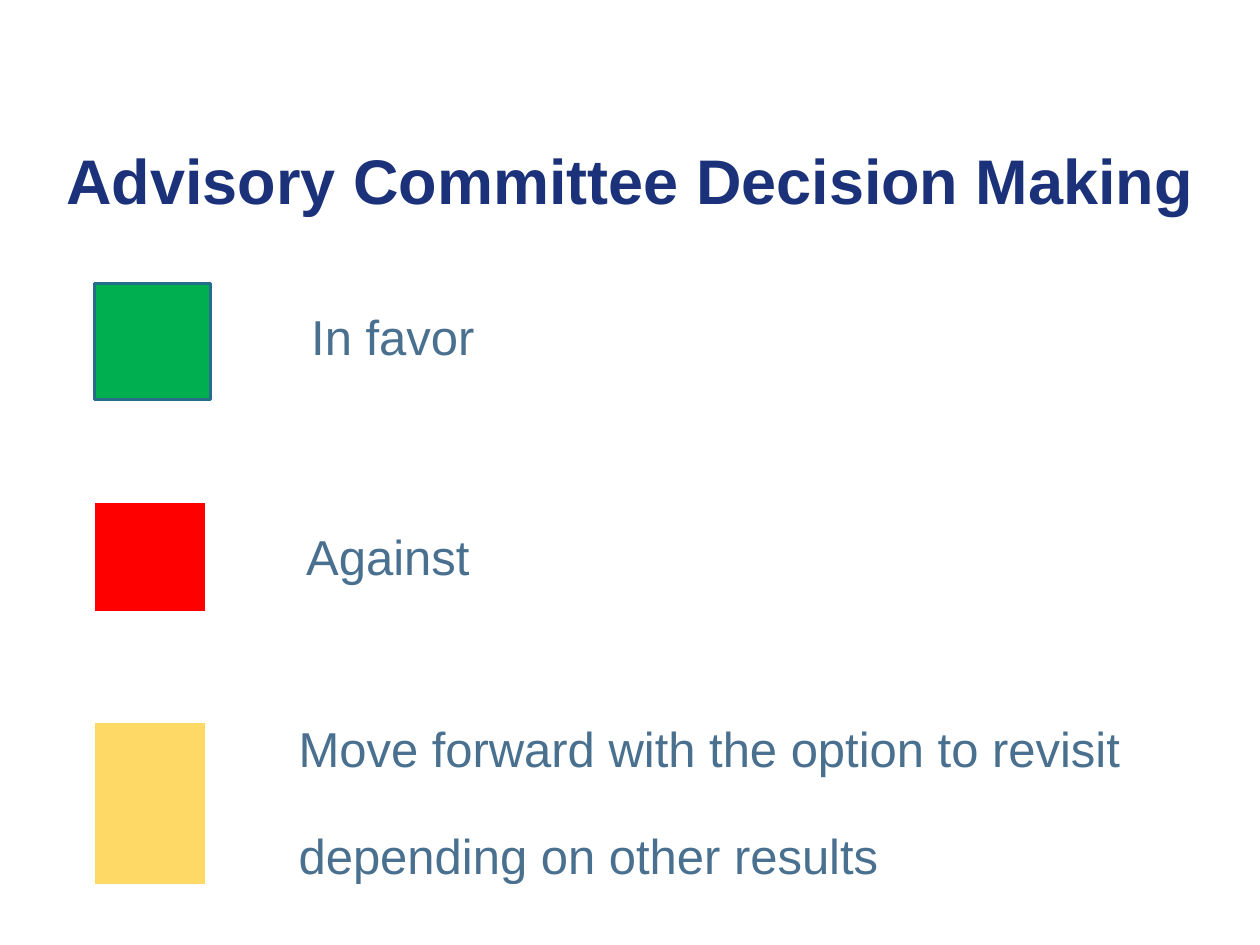
from pptx import Presentation
from pptx.dml.color import RGBColor
from pptx.enum.shapes import MSO_SHAPE as SHAPE
from pptx.enum.text import MSO_ANCHOR as ANCHOR, PP_ALIGN as ALIGN
from pptx.util import Inches, Pt

COLORS = {
    "title": "1B327A", "text": "4A7090", "blue": "2F75B5", "red": "FF0000",
    "yellow": "FFD966", "green": "00B050", "outline": "266D8A",
}


def color(name):
    return RGBColor.from_string(COLORS[name])


def write(p, text, size=28, fill="text", bold=False, align=None, before=0):
    p.alignment = align
    p.space_before = Pt(before)
    r = p.add_run()
    r.text = text
    r.font.name = "Arial"
    r.font.size = Pt(size)
    r.font.bold = bold
    r.font.color.rgb = color(fill)


class Deck:
    def __init__(self, width, height):
        self.prs = Presentation()
        self.prs.slide_width = Inches(width)
        self.prs.slide_height = Inches(height)
        self.s = self.prs.slides.add_slide(self.prs.slide_layouts[5])

    def title(self, text, x, y, w, h):
        sp = self.s.shapes.title
        sp.left, sp.top, sp.width, sp.height = map(Inches, (x, y, w, h))
        tf = sp.text_frame
        tf.word_wrap = True
        tf.vertical_anchor = ANCHOR.MIDDLE
        write(tf.paragraphs[0], text, size=36, fill="title", bold=True, align=ALIGN.CENTER)

    def legend(self, entries, x, y, widths, row_height):
        """Color key: one row per entry, with a merged spacer row between entries."""
        count = 2 * len(entries) - 1
        sp = self.s.shapes.add_table(count, 2, Inches(x), Inches(y),
                                     Inches(sum(widths)), Inches(count * row_height))
        table = sp.table
        table.first_row = table.horz_banding = False
        for column, width in zip(table.columns, widths):
            column.width = Inches(width)
        for row in table.rows:
            row.height = Inches(row_height)
        for cell in table.iter_cells():
            cell.fill.background()
        for i in range(1, count, 2):
            table.cell(i, 0).merge(table.cell(i, 1))
        for i, (fill, indent, lines) in enumerate(entries):
            swatch, label = table.cell(2 * i, 0), table.cell(2 * i, 1)
            swatch.fill.solid()
            swatch.fill.fore_color.rgb = color(fill)
            label.vertical_anchor = ANCHOR.MIDDLE
            label.margin_left = Inches(indent)
            label.margin_right = label.margin_top = Inches(0.01)
            label.margin_bottom = 0
            tf = label.text_frame
            for j, line in enumerate(lines):
                p = tf.add_paragraph() if j else tf.paragraphs[0]
                write(p, line, before=30 if j else 0)

    def square(self, x, y, side, fill, line):
        sp = self.s.shapes.add_shape(SHAPE.RECTANGLE, Inches(x), Inches(y),
                                     Inches(side), Inches(side))
        sp.shadow.inherit = False
        sp.fill.solid()
        sp.fill.fore_color.rgb = color(fill)
        sp.line.color.rgb = color(line)
        sp.line.width = Pt(2)


def main():
    deck = Deck(10, 7.5)

    # Title
    deck.title("Advisory Committee Decision Making", 0, 0.92, 10, 1)

    # Voting colors and their meanings
    deck.legend([
        ("blue", 0.84, ["In favor"]),
        ("red", 0.8, ["Against"]),
        ("yellow", 0.74, ["Move forward with the option to revisit",
                          "depending on other results"]),
    ], x=0.75, y=2.25, widths=(0.88, 7.45), row_height=0.87)

    # Green card over the first swatch
    deck.square(0.75, 2.25, 0.92, "green", "outline")

    deck.prs.save("out.pptx")


if __name__ == "__main__":
    main()
